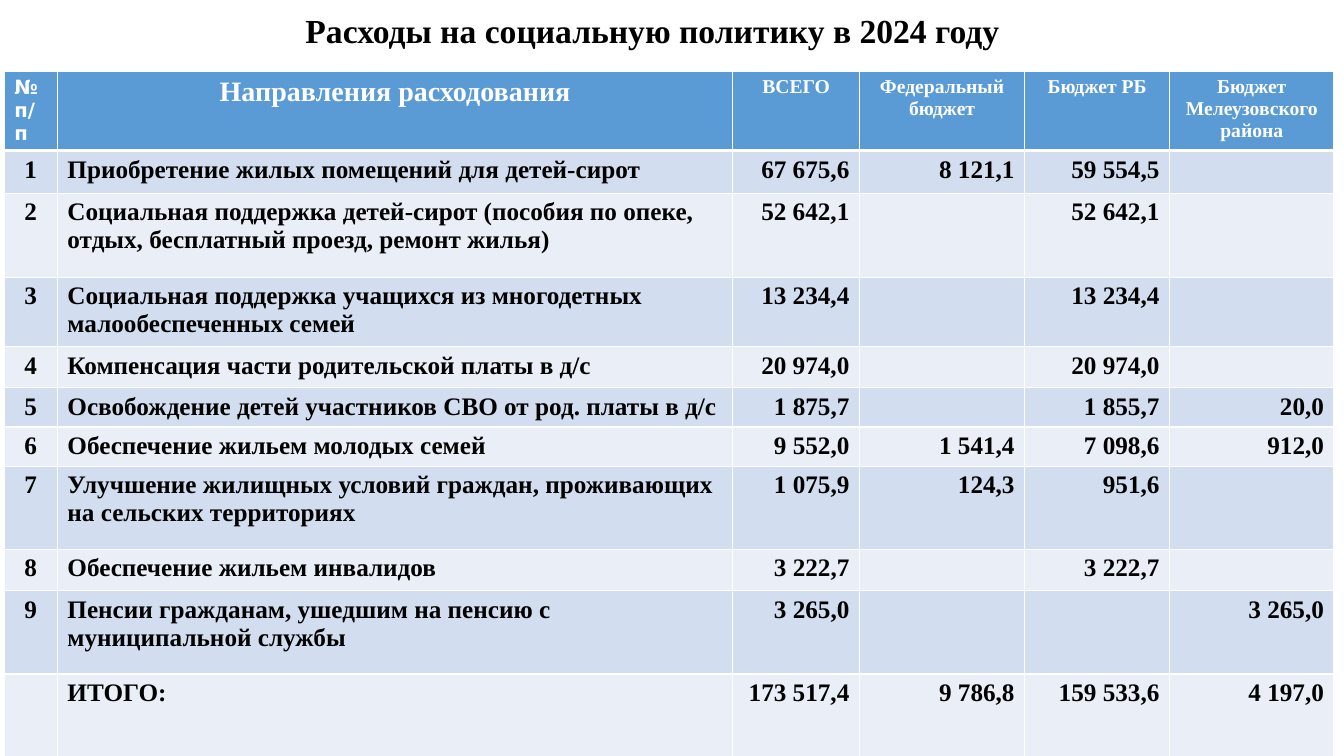
import pptx
import pptx.dml.color
import pptx.enum.text
import pptx.oxml
import pptx.oxml.ns
import pptx.util

Pt = pptx.util.Pt
ALIGN = pptx.enum.text.PP_ALIGN
ANCHOR = pptx.enum.text.MSO_ANCHOR
SERIF = "Times New Roman"
WHITE, BLACK, HEADER_BLUE = "FFFFFF", "000000", "5B9BD5"
BANDS = ("D2DEEF", "EAEFF7")

TITLE = "Расходы на социальную политику в 2024 году"
HEADER = ("№ п/п", "Направления расходования", "ВСЕГО", "Федеральный бюджет",
          "Бюджет РБ", "Бюджет Мелеузовского района")
EXPENSES = [
    ("1", "Приобретение жилых помещений для детей-сирот", "67 675,6", "8 121,1", "59 554,5", ""),
    ("2", "Социальная поддержка детей-сирот (пособия по опеке, отдых, бесплатный проезд, ремонт жилья)",
     "52 642,1", "", "52 642,1", ""),
    ("3", "Социальная поддержка учащихся из многодетных малообеспеченных семей",
     "13 234,4", "", "13 234,4", ""),
    ("4", "Компенсация части родительской платы в д/с", "20 974,0", "", "20 974,0", ""),
    ("5", "Освобождение детей участников СВО от род. платы в д/с", "1 875,7", "", "1 855,7", "20,0"),
    ("6", "Обеспечение жильем молодых семей", "9 552,0", "1 541,4", "7 098,6", "912,0"),
    ("7", "Улучшение жилищных условий граждан, проживающих на сельских территориях",
     "1 075,9", "124,3", "951,6", ""),
    ("8", "Обеспечение жильем инвалидов", "3 222,7", "", "3 222,7", ""),
    ("9", "Пенсии гражданам, ушедшим на пенсию с муниципальной службы",
     "3 265,0", "", "", "3 265,0"),
    ("", "ИТОГО:", "173 517,4", "9 786,8", "159 533,6", "4 197,0"),
]
COLUMN_WIDTHS = (38, 482.5, 90.5, 118, 103.5, 117.5)
ROW_HEIGHTS = (56.5, 30.5, 60, 49.5, 29.5, 28, 28, 59.5, 29.5, 59.5, 59.5)
HEADER_FONTS = (("DejaVu Sans", 14), (SERIF, 20)) + ((SERIF, 14),) * 4
HEADER_ALIGNS = (ALIGN.LEFT,) + (ALIGN.CENTER,) * 5
BODY_ALIGNS = (ALIGN.CENTER, ALIGN.LEFT) + (ALIGN.RIGHT,) * 4


def color(hex_string):
    return pptx.dml.color.RGBColor.from_string(hex_string)


def style_paragraph(paragraph, align, font_name, size, font_color):
    paragraph.alignment = align
    font = paragraph.font
    font.name, font.size, font.bold = font_name, Pt(size), True
    font.color.rgb = color(font_color)


def keep_empty_size(paragraph, size):
    """Give an empty cell the text size of its row, so that the row does not grow."""
    paragraph._p.append(pptx.oxml.parse_xml(
        f'<a:endParaRPr {pptx.oxml.ns.nsdecls("a")} sz="{size * 100}" b="1">'
        f'<a:latin typeface="{SERIF}"/></a:endParaRPr>'))


def set_borders(cell, widths):
    properties = cell._tc.get_or_add_tcPr()
    for position, (side, width) in enumerate(widths.items()):
        properties.insert(position, pptx.oxml.parse_xml(
            f'<a:ln{side} {pptx.oxml.ns.nsdecls("a")} w="{Pt(width)}">'
            f'<a:solidFill><a:srgbClr val="{WHITE}"/></a:solidFill></a:ln{side}>'))


def add_title(slide):
    title = slide.shapes.title
    title.left, title.top, title.width, title.height = Pt(3), Pt(2), Pt(926), Pt(43)
    title.fill.solid()
    title.fill.fore_color.rgb = color(WHITE)
    title.text_frame.text = TITLE
    title.text_frame.vertical_anchor = ANCHOR.MIDDLE
    paragraph = title.text_frame.paragraphs[0]
    paragraph.line_spacing = 0.9
    style_paragraph(paragraph, ALIGN.CENTER, SERIF, 24, BLACK)


def add_expense_table(slide):
    rows = [HEADER] + EXPENSES
    table = slide.shapes.add_table(
        len(rows), len(HEADER), Pt(3), Pt(51),
        Pt(sum(COLUMN_WIDTHS)), Pt(sum(ROW_HEIGHTS))).table
    for column, width in zip(table.columns, COLUMN_WIDTHS):
        column.width = Pt(width)
    for row, height in zip(table.rows, ROW_HEIGHTS):
        row.height = Pt(height)

    for r, texts in enumerate(rows):
        is_header = r == 0
        for c, text in enumerate(texts):
            cell = table.cell(r, c)
            cell.text = text
            cell.fill.solid()
            cell.fill.fore_color.rgb = color(HEADER_BLUE if is_header else BANDS[(r - 1) % 2])
            set_borders(cell, {"L": 1, "R": 1, "T": 3 if r == 1 else 1, "B": 3 if is_header else 1})
            paragraph = cell.text_frame.paragraphs[0]
            if is_header:
                style_paragraph(paragraph, HEADER_ALIGNS[c], *HEADER_FONTS[c], WHITE)
            else:
                style_paragraph(paragraph, BODY_ALIGNS[c], SERIF, 18, BLACK)
            if not text:
                keep_empty_size(paragraph, 18)


def main():
    presentation = pptx.Presentation()
    presentation.slide_width, presentation.slide_height = Pt(960), Pt(540)
    slide = presentation.slides.add_slide(presentation.slide_layouts[5])
    add_title(slide)
    add_expense_table(slide)
    presentation.save("out.pptx")


if __name__ == "__main__":
    main()
